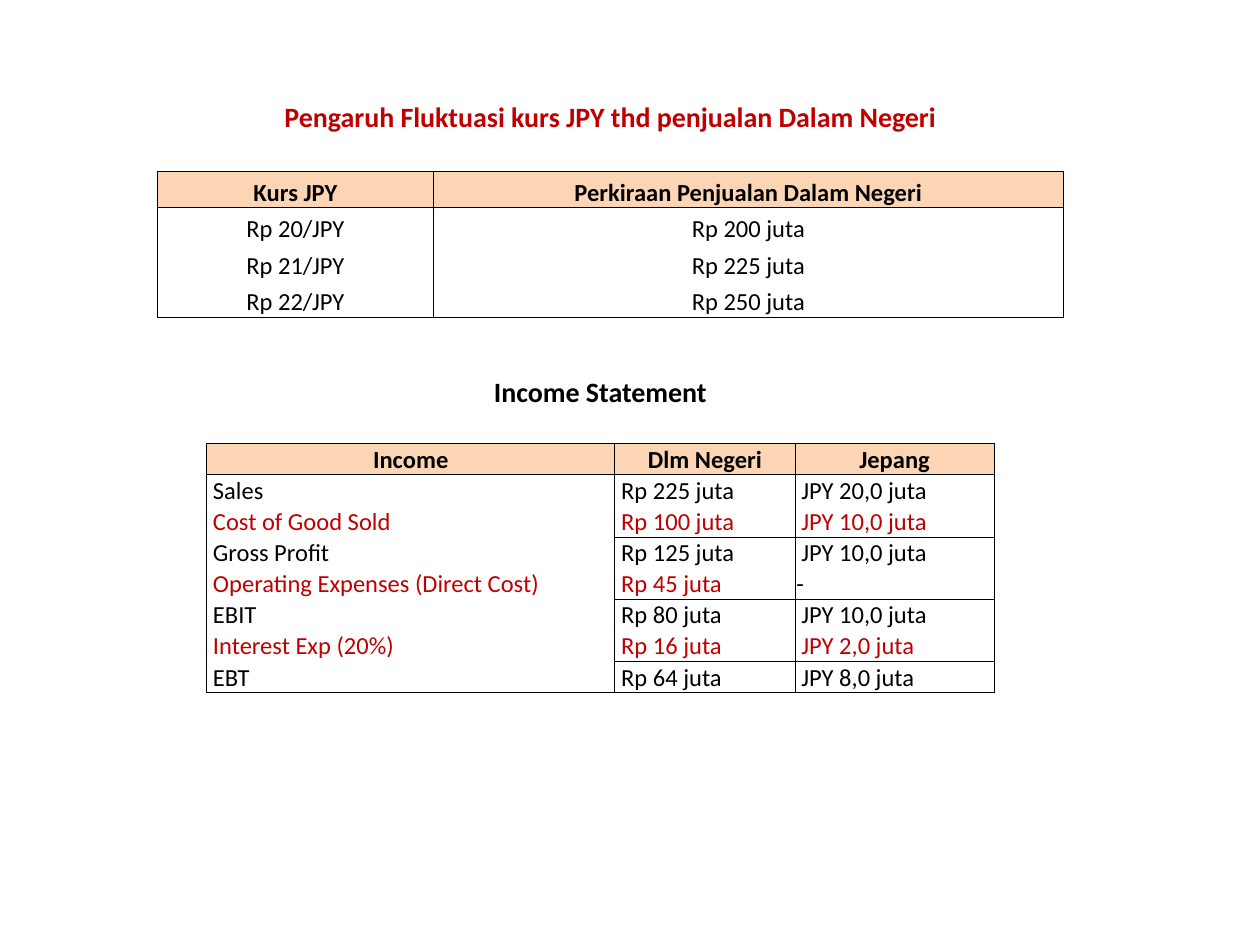
from dataclasses import dataclass

from lxml import etree
from pptx import Presentation
from pptx.dml.color import RGBColor
from pptx.enum import text
from pptx.oxml import ns
from pptx.util import Inches, Pt

PLAIN_STYLE = "{2D5ABB26-0587-4C30-8999-92F81FD0307C}"  # no style, no grid


@dataclass(frozen=True)
class Theme:
    font: str = "Calibri"
    title_size: int = 16
    body_size: int = 14
    ink: str = "000000"
    accent: str = "C00000"
    header_fill: str = "FCD5B4"
    paper: str = "FFFFFF"
    line_width: float = 0.5
    inset: float = 0.01
    indent: float = 0.05


class Page:
    def __init__(self, deck, theme):
        self.theme = theme
        self.slide = deck.slides.add_slide(deck.slide_layouts[6])

    def table(self, left, top, widths, heights):
        """Add an unstyled table; return it with empty cells prepared."""
        frame = self.slide.shapes.add_table(
            len(heights), len(widths), Inches(left), Inches(top),
            Inches(sum(widths)), Inches(sum(heights)))
        table = frame.table
        table.first_row = table.horz_banding = False
        table._tbl.tblPr.find(ns.qn("a:tableStyleId")).text = PLAIN_STYLE
        for column, width in zip(table.columns, widths):
            column.width = Inches(width)
        for row, height in zip(table.rows, heights):
            row.height = Inches(height)
        for cell in table.iter_cells():
            self.inset(cell, self.theme.inset)
            # Empty cells would otherwise keep a tall default line
            paragraph = cell.text_frame.paragraphs[0]._p
            etree.SubElement(paragraph, ns.qn("a:endParaRPr"),
                             sz=str(self.theme.body_size * 100))
        return table

    def inset(self, cell, left):
        cell.margin_left = Inches(left)
        cell.margin_top = cell.margin_right = Inches(self.theme.inset)
        cell.margin_bottom = 0
        cell.vertical_anchor = text.MSO_ANCHOR.BOTTOM

    def borders(self, cell, sides):
        properties = cell._tc.get_or_add_tcPr()
        for side in "LRTB":
            if side in sides:
                line = etree.SubElement(properties, ns.qn("a:ln" + side),
                                        w=str(Pt(self.theme.line_width)))
                fill = etree.SubElement(line, ns.qn("a:solidFill"))
                etree.SubElement(fill, ns.qn("a:srgbClr"), val=self.theme.ink)

    def cell(self, cell, words, sides="", color=None, size=None, bold=False,
             fill=None, centered=True):
        theme = self.theme
        self.borders(cell, sides)
        if fill:
            cell.fill.solid()
            cell.fill.fore_color.rgb = RGBColor.from_string(fill)
        para = cell.text_frame.paragraphs[0]
        para.text = words
        para.alignment = text.PP_ALIGN.CENTER if centered else text.PP_ALIGN.LEFT
        for span in para.runs:
            span.font.name = theme.font
            span.font.size = Pt(size or theme.body_size)
            span.font.bold = bold
            span.font.color.rgb = RGBColor.from_string(color or theme.ink)

    def title(self, table, words, color):
        first = table.cell(0, 0)
        first.merge(table.cell(0, len(table.columns) - 1))
        self.cell(first, words, color=color, size=self.theme.title_size,
                  bold=True, fill=self.theme.paper)

    def header(self, table, row, labels):
        for column, label in enumerate(labels):
            self.cell(table.cell(row, column), label, "LRTB", bold=True,
                      fill=self.theme.header_fill)


RATES = [
    ("Rp 20/JPY", "Rp 200 juta"),
    ("Rp 21/JPY", "Rp 225 juta"),
    ("Rp 22/JPY", "Rp 250 juta"),
]

INCOME = [
    ("Sales", "Rp 225 juta", "JPY 20,0 juta"),
    ("Cost of Good Sold", "Rp 100 juta", "JPY 10,0 juta"),
    ("Gross Profit", "Rp 125 juta", "JPY 10,0 juta"),
    ("Operating Expenses (Direct Cost)", "Rp 45 juta", "-"),
    ("EBIT", "Rp 80 juta", "JPY 10,0 juta"),
    ("Interest Exp (20%)", "Rp 16 juta", "JPY 2,0 juta"),
    ("EBT", "Rp 64 juta", "JPY 8,0 juta"),
]


def add_rates(page):
    table = page.table(1.25, 0.78, [2.19, 5], [0.29] * 6)
    page.title(table, "Pengaruh Fluktuasi kurs JPY thd penjualan Dalam Negeri",
               page.theme.accent)
    page.header(table, 2, ["Kurs JPY", "Perkiraan Penjualan Dalam Negeri"])
    for index, record in enumerate(RATES):
        sides = "LRB" if index == len(RATES) - 1 else "LR"
        for column, words in enumerate(record):
            page.cell(table.cell(index + 3, column), words, sides)


def add_income(page):
    theme = page.theme
    table = page.table(1.64, 2.97, [3.24, 1.43, 1.58],
                       [0.28, 0.27] + [0.24] * 8)
    page.title(table, "Income Statement", theme.ink)
    page.header(table, 2, ["Income", "Dlm Negeri", "Jepang"])
    last = len(INCOME) - 1
    for index, record in enumerate(INCOME):
        deduction = index % 2 == 1
        for column, words in enumerate(record):
            cell = table.cell(index + 3, column)
            # Amounts are ruled off under each deduction
            ruled = index == last or (deduction and column > 0)
            empty = words == "-"
            page.inset(cell, theme.inset if empty else theme.indent)
            page.cell(cell, words, "LRB" if ruled else "LR", centered=False,
                      color=theme.accent if deduction and not empty else None)


def main():
    deck = Presentation()
    deck.slide_width, deck.slide_height = Inches(10), Inches(7.5)
    page = Page(deck, Theme())
    add_rates(page)
    add_income(page)
    deck.save("out.pptx")


if __name__ == "__main__":
    main()
